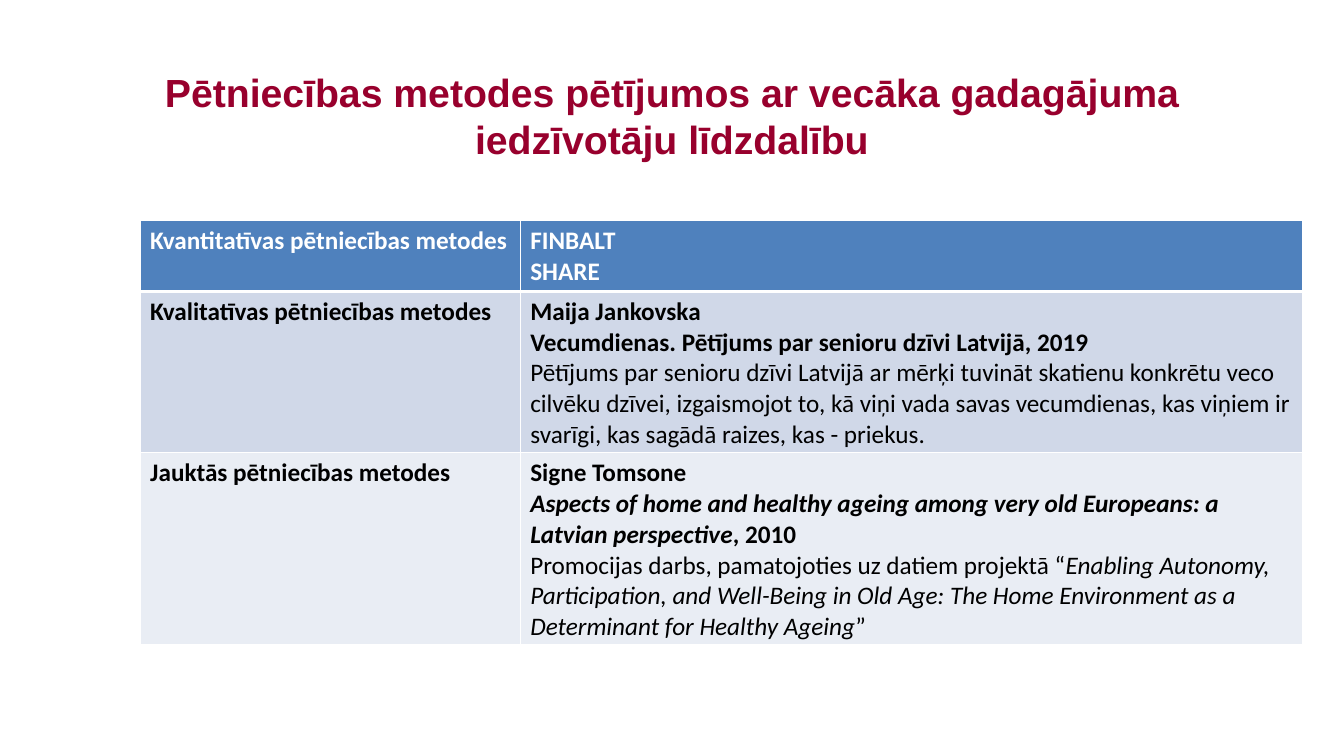
from dataclasses import dataclass

from lxml import etree
from pptx import Presentation
from pptx.dml.color import RGBColor
from pptx.enum import text
from pptx.oxml import ns
from pptx.util import Inches, Pt


@dataclass(frozen=True)
class Theme:
    title_font: str = "Arial"
    table_font: str = "Calibri"
    title_size: int = 28
    table_size: int = 18
    title_color: str = "98002D"
    header_text: str = "FFFFFF"
    body_text: str = "000000"
    border: str = "FFFFFF"
    row_fills: tuple = ("4F81BD", "D0D8E8", "E9EDF4")


THEME = Theme()
BOLD, ITALIC = "b", "i"
TITLE = "Pētniecības metodes pētījumos ar vecāka gadagājuma iedzīvotāju līdzdalību"
COLUMN_WIDTHS = (3.77, 7.76)
ROW_HEIGHTS = (0.7, 1.6, 1.9)

# Each cell is a list of paragraphs, each paragraph a list of (words, style).
METHODS = [
    (
        [[("Kvantitatīvas pētniecības metodes", BOLD)]],
        [[("FINBALT", BOLD)], [("SHARE", BOLD)]],
    ),
    (
        [[("Kvalitatīvas pētniecības metodes", BOLD)]],
        [
            [("Maija Jankovska", BOLD)],
            [("Vecumdienas. Pētījums par senioru dzīvi Latvijā, 2019", BOLD)],
            [("Pētījums par senioru dzīvi Latvijā ar mērķi tuvināt skatienu "
              "konkrētu veco cilvēku dzīvei, izgaismojot to, kā viņi vada savas "
              "vecumdienas, kas viņiem ir svarīgi, kas sagādā raizes, "
              "kas - priekus.", "")],
        ],
    ),
    (
        [[("Jauktās pētniecības metodes", BOLD)]],
        [
            [("Signe Tomsone", BOLD)],
            [("Aspects of home and healthy ageing among very old Europeans: "
              "a Latvian perspective", BOLD + ITALIC),
             (", 2010", BOLD)],
            [("Promocijas darbs, pamatojoties uz datiem projektā “", ""),
             ("Enabling Autonomy, Participation, and Well-Being in Old Age: "
              "The Home Environment as a Determinant for Healthy Ageing", ITALIC),
             ("”", "")],
        ],
    ),
]


def set_font(font, name, size, color):
    font.name = name
    font.size = Pt(size)
    font.color.rgb = RGBColor.from_string(color)


def add_title(page):
    box = page.shapes.add_textbox(Inches(1.08), Inches(0.67), Inches(11.17), Inches(0.94))
    frame = box.text_frame
    frame.word_wrap = True
    frame.vertical_anchor = text.MSO_ANCHOR.MIDDLE
    frame.margin_left = frame.margin_top = frame.margin_right = frame.margin_bottom = 0
    para = frame.paragraphs[0]
    para.text = TITLE
    para.alignment = text.PP_ALIGN.CENTER
    set_font(para.font, THEME.title_font, THEME.title_size, THEME.title_color)
    para.font.bold = True


def set_borders(cell, top, bottom):
    """Draw the four cell edges; top and bottom are widths in points."""
    properties = cell._tc.get_or_add_tcPr()
    for side, width in (("L", 1), ("R", 1), ("T", top), ("B", bottom)):
        line = etree.SubElement(properties, ns.qn(f"a:ln{side}"), w=str(Pt(width)))
        fill = etree.SubElement(line, ns.qn("a:solidFill"))
        etree.SubElement(fill, ns.qn("a:srgbClr"), val=THEME.border)


def write_cell(cell, paragraphs, color):
    frame = cell.text_frame
    for index, spans in enumerate(paragraphs):
        para = frame.add_paragraph() if index else frame.paragraphs[0]
        set_font(para.font, THEME.table_font, THEME.table_size, color)
        for words, style in spans:
            span = para.add_run()
            span.text = words
            set_font(span.font, THEME.table_font, THEME.table_size, color)
            span.font.bold = BOLD in style
            span.font.italic = ITALIC in style


def add_methods_table(page):
    table = page.shapes.add_table(
        len(METHODS), len(COLUMN_WIDTHS), Inches(1.39), Inches(2.19),
        Inches(sum(COLUMN_WIDTHS)), Inches(sum(ROW_HEIGHTS))).table
    for column, width in zip(table.columns, COLUMN_WIDTHS):
        column.width = Inches(width)
    for index, (row, height) in enumerate(zip(table.rows, ROW_HEIGHTS)):
        row.height = Inches(height)
        color = THEME.body_text if index else THEME.header_text
        for cell, paragraphs in zip(row.cells, METHODS[index]):
            set_borders(cell, top=3 if index == 1 else 1, bottom=1 if index else 3)
            cell.fill.solid()
            cell.fill.fore_color.rgb = RGBColor.from_string(THEME.row_fills[index])
            write_cell(cell, paragraphs, color)


def main():
    deck = Presentation()
    deck.slide_width, deck.slide_height = Inches(13.33), Inches(7.5)
    page = deck.slides.add_slide(deck.slide_layouts[6])
    add_title(page)
    add_methods_table(page)
    deck.save("out.pptx")


if __name__ == "__main__":
    main()
